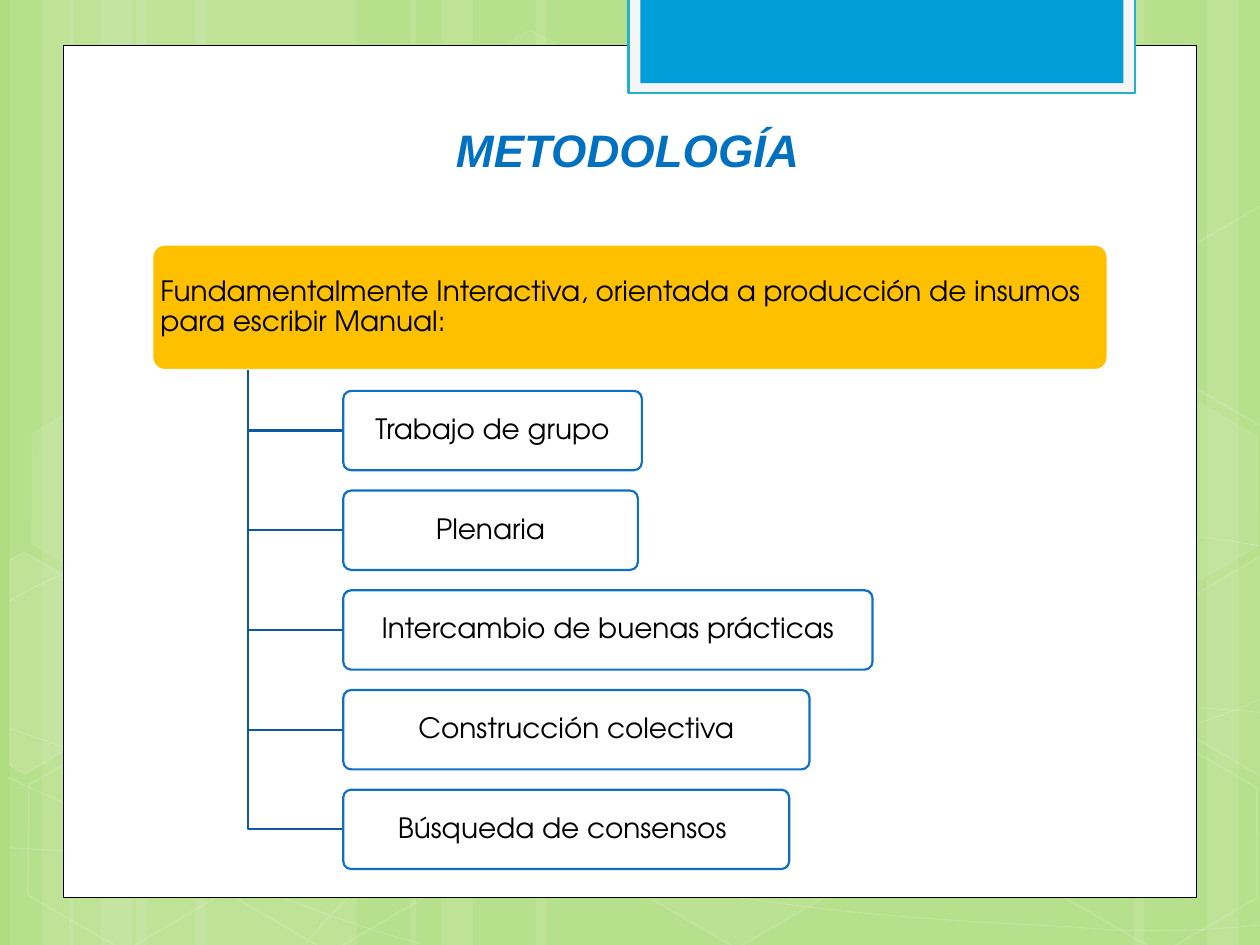
"""Build the METODOLOGÍA slide: a header with five linked steps on a green page."""
from dataclasses import dataclass
from typing import NamedTuple

from lxml.etree import SubElement
from pptx import Presentation
from pptx.dml.color import RGBColor
from pptx.enum.shapes import MSO_SHAPE
from pptx.enum.text import MSO_ANCHOR, PP_ALIGN
from pptx.oxml.ns import qn
from pptx.util import Cm, Pt


@dataclass(frozen=True)
class Theme:
    page: str = "AFDD7F"
    white: str = "FFFFFF"
    black: str = "000000"
    pale: str = "F5F5F5"
    teal: str = "21B2C9"
    sky: str = "009DD9"
    title: str = "0070C0"
    gold: str = "FFC000"
    edge: str = "0F6FC6"
    link: str = "0C599F"
    head: str = "Arial"
    body: str = "TeX Gyre Adventor"
    big: float = 26
    text: float = 16
    hair: float = 0.5
    thin: float = 1
    line: float = 1.25


class Box(NamedTuple):
    left: float
    top: float
    width: float
    height: float


class Look(NamedTuple):
    fill: str | None = None
    line: str | None = None
    weight: float = 1
    tint: int = 100
    trace: int = 100


class Hex(NamedTuple):
    left: float
    top: float
    tint: int
    trace: int


class Cut(NamedTuple):
    points: list
    tint: int


class Step(NamedTuple):
    text: str
    width: float


THEME = Theme()
BANDS = [(2.74, 4.45), (0.2, 1.27), (0.84, 2.12), (3.94, 4.45), (1.4, 1.27), (2.03, 2.12),
         (18.62, 4.45), (24.33, 1.27), (22.86, 2.12), (10.8, 7.82), (8.26, 1.27), (8.89, 2.12)]
CURVES = [
    [(0.18, 17.09), (1.55, 17.17), (2.92, 17.25), (4.83, 17.22), (6.73, 17.2), (9.09, 17.15),
     (11.63, 16.89), (14.17, 16.64), (17.78, 16.15), (20.12, 15.67), (22.43, 15.19),
     (24.82, 14.43), (25.58, 14)],
    [(0.18, 12.12), (0.91, 11.71), (1.65, 11.33), (3.07, 10.95), (4.52, 10.57), (6.58, 10.01),
     (8.81, 9.83), (11.07, 9.65), (13.82, 9.63), (16.61, 9.83), (19.41, 10.03),
     (24.05, 10.82), (25.58, 11.02)],
    [(0.15, 15.67), (3.2, 17.07), (6.27, 18.47), (8.48, 19.02)],
    [(0.18, 14.68), (0.97, 14.96), (1.78, 15.24), (3.25, 15.65), (4.72, 16.03), (6.93, 16.66),
     (9.07, 17.09), (11.18, 17.53), (13.84, 17.98), (15.95, 18.24), (18.06, 18.52),
     (20.32, 18.62), (21.67, 18.69), (22.99, 18.8), (23.34, 18.75), (24, 18.75),
     (24.66, 18.72), (25.12, 18.67), (25.58, 18.64)],
    [(6.15, 19.02), (6.6, 18.52), (7.06, 18.01), (7.67, 17.55), (8.28, 17.09), (9.14, 16.59),
     (9.86, 16.23), (10.57, 15.88), (11, 15.72), (11.94, 15.47), (12.85, 15.21),
     (14.55, 14.86), (15.44, 14.68), (16.36, 14.5), (16.48, 14.5), (17.27, 14.45),
     (18.06, 14.38), (19.3, 14.3), (20.17, 14.27), (21.06, 14.25), (22.5, 14.27),
     (22.5, 14.27), (23.1, 14.27), (23.6, 14.27), (24.21, 14.27), (24.66, 14.3),
     (25.1, 14.33), (25.32, 14.35), (25.55, 14.4), (25.48, 14.35), (25.55, 14.38)],
]
HEXES = [Hex(8.48, 0.91, 4, 8), Hex(12.62, 14.96, 6, 12), Hex(0.28, 15.01, 0, 12),
         Hex(0.36, 7.92, 7, 8), Hex(4.42, 15.04, 0, 12), Hex(19.13, 11.51, 10, 12),
         Hex(21.18, 15.06, 0, 12), Hex(21.18, 7.98, 7, 8)]
CUTS = [
    Cut([(0.2, 11.3), (0.48, 11.13), (2.44, 12.24), (2.41, 14.48), (0.51, 15.6), (0.2, 15.42)], 10),
    Cut([(23.52, 12.32), (25.43, 11.2), (25.63, 11.33), (25.63, 15.57), (25.45, 15.67),
         (23.52, 14.55)], 4),
    Cut([(23.52, 5.26), (25.43, 4.14), (25.65, 4.27), (25.63, 8.51), (25.45, 8.61),
         (23.52, 7.49)], 0),
]
STEPS = [Step("Trabajo de grupo", 6.02), Step("Plenaria", 5.94),
         Step("Intercambio de buenas prácticas", 10.67), Step("Construcción colectiva", 9.4),
         Step("Búsqueda de consensos ", 8.99)]
INSET = {"margin_left": Cm(0.09), "margin_right": Cm(0.09),
         "margin_top": Cm(0.1), "margin_bottom": Cm(0.1)}
BODY = {"name": THEME.body, "size": Pt(THEME.text)}
TITLE = {"name": THEME.head, "size": Pt(THEME.big), "bold": True, "italic": True}


def fade(node, share: int) -> None:
    if share < 100:
        SubElement(node.find(".//" + qn("a:srgbClr")), qn("a:alpha"), val=str(share * 1000))


def paint(shape, look: Look):
    shape.shadow.inherit = False
    props = shape.element.spPr
    if look.fill and look.tint:
        shape.fill.solid()
        shape.fill.fore_color.rgb = RGBColor.from_string(look.fill)
        fade(props.find(qn("a:solidFill")), look.tint)
    else:
        shape.fill.background()
    if look.line:
        shape.line.color.rgb = RGBColor.from_string(look.line)
        shape.line.width = Pt(look.weight)
        fade(props.find(qn("a:ln")), look.trace)
    else:
        shape.line.fill.background()
    return shape


def block(slide, kind: MSO_SHAPE, box: Box, look: Look):
    return paint(slide.shapes.add_shape(kind, *map(Cm, box)), look)


def trace(slide, points: list, look: Look, close: bool = False):
    dots = [(Cm(x), Cm(y)) for x, y in points]
    pen = slide.shapes.build_freeform(*dots[0], scale=1.0)
    pen.add_line_segments(dots[1:], close=close)
    return paint(pen.convert_to_shape(), look)


def bend(shape) -> None:
    route = shape.element.spPr.find(".//" + qn("a:path"))
    lines = route.findall(qn("a:lnTo"))
    for start in range(0, len(lines), 3):
        curve = SubElement(route, qn("a:cubicBezTo"))
        for line in lines[start:start + 3]:
            curve.append(line[0])
            route.remove(line)


def write(shape, text: str, font: dict, tone: str, align: PP_ALIGN, frame: dict) -> None:
    area = shape.text_frame
    line = area.paragraphs[0]
    run = line.add_run()
    run.text = text
    run.font.color.rgb = RGBColor.from_string(tone)
    for target, values in ((area, {"word_wrap": True, **frame}), (run.font, font)):
        for name, value in values.items():
            setattr(target, name, value)
    line.alignment = align


def label(slide, box: Box, look: Look, text: str, align: PP_ALIGN) -> None:
    shape = block(slide, MSO_SHAPE.ROUNDED_RECTANGLE, box, look)
    shape.adjustments[0] = 0.1
    write(shape, text, BODY, THEME.black, align, {"vertical_anchor": MSO_ANCHOR.MIDDLE, **INSET})
    shape.text_frame.paragraphs[0].line_spacing = 0.9


def scene(slide) -> None:
    slide.background.fill.solid()
    slide.background.fill.fore_color.rgb = RGBColor.from_string(THEME.page)
    for left, width in BANDS:
        block(slide, MSO_SHAPE.RECTANGLE, Box(left, 0, width, 19.05), Look(THEME.white, tint=10))
    for knots in CURVES:
        bend(trace(slide, knots, Look(line=THEME.white, weight=THEME.hair, trace=20)))
    for left, top, tint, share in HEXES:
        look = Look(THEME.white, THEME.white, THEME.thin, tint, share)
        shape = block(slide, MSO_SHAPE.HEXAGON, Box(left, top, 4.45, 3.86), look)
        shape.adjustments[0] = 0.285
        shape.rotation = 30
    for points, tint in CUTS:
        trace(slide, points, Look(THEME.white, THEME.white, THEME.thin, tint, 12), True)
    for box, look in (
        (Box(1.27, 0.91, 22.86, 17.19), Look(THEME.white, THEME.black, THEME.hair)),
        (Box(12.67, -0.05, 10.21, 1.93), Look(THEME.pale, THEME.teal, THEME.line)),
        (Box(12.91, -0.05, 9.74, 1.73), Look(THEME.sky)),
    ):
        block(slide, MSO_SHAPE.RECTANGLE, box, look)


def chart(slide) -> None:
    label(slide, Box(3.07, 4.93, 19.26, 2.53), Look(THEME.gold, THEME.white, THEME.line),
          "Fundamentalmente Interactiva, orientada a producción de insumos para escribir Manual:",
          PP_ALIGN.LEFT)
    stem, base, left, high = 5, 7.46, 6.92, 1.6
    for place, step in enumerate(STEPS):
        top = 7.88 + place * 2.01
        mid = top + high / 2
        trace(slide, [(stem, base), (stem, mid), (left, mid)],
              Look(line=THEME.link, weight=THEME.line))
        label(slide, Box(left, top, step.width, high), Look(THEME.white, THEME.edge, THEME.line),
              step.text, PP_ALIGN.CENTER)


def main() -> None:
    deck = Presentation()
    deck.slide_width, deck.slide_height = Cm(25.4), Cm(19.05)
    slide = deck.slides.add_slide(deck.slide_layouts[6])
    scene(slide)
    title = slide.shapes.add_textbox(*map(Cm, Box(2.9, 2.32, 19.51, 1.37)))
    write(title, "METODOLOGÍA", TITLE, THEME.title, PP_ALIGN.CENTER,
          {"vertical_anchor": MSO_ANCHOR.BOTTOM})
    chart(slide)
    deck.save("out.pptx")


if __name__ == "__main__":
    main()
